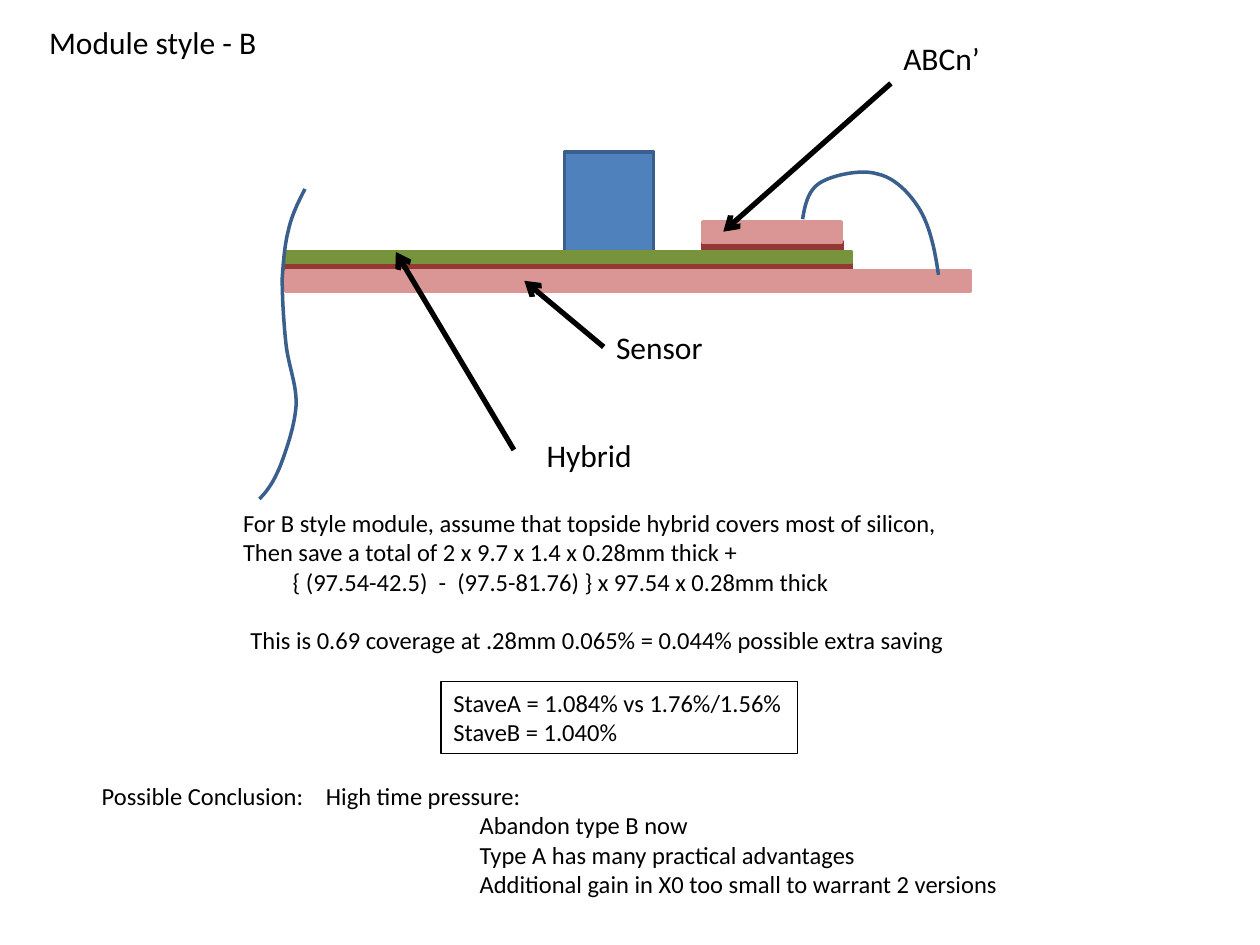
from dataclasses import dataclass

from lxml.etree import SubElement
from pptx import Presentation
from pptx.dml.color import RGBColor
from pptx.enum.shapes import MSO_CONNECTOR, MSO_SHAPE
from pptx.enum.text import MSO_AUTO_SIZE
from pptx.oxml.ns import qn
from pptx.slide import Slide
from pptx.util import Cm, Pt

BLACK, BLUE, BLUE_EDGE = "000000", "4F81BD", "3A5F8C"
GLUE, HYBRID, SILICON = "953735", "77933C", "D99694"
CURVE_STEPS = 12


def color(hex_string):
    return RGBColor.from_string(hex_string)


def bezier(start, segments):
    points = [start]
    for segment in segments:
        corners = (points[-1], *segment)
        for step in range(1, CURVE_STEPS + 1):
            t = step / CURVE_STEPS
            weights = ((1 - t) ** 3, 3 * t * (1 - t) ** 2, 3 * t * t * (1 - t), t ** 3)
            points.append(tuple(
                sum(weight * corner[axis] for weight, corner in zip(weights, corners))
                for axis in (0, 1)))
    return points


@dataclass
class Drawing:
    slide: Slide
    font_name: str = "Calibri"
    label_size: int = 18
    body_size: int = 14
    edge_width: float = 2
    arrow_width: float = 3

    def text(self, left, top, width, height, lines, size=None, border=None,
             indents=None, tab_stop=None):
        shape = self.slide.shapes.add_textbox(Cm(left), Cm(top), Cm(width), Cm(height))
        frame = shape.text_frame
        frame.word_wrap = False
        frame.auto_size = MSO_AUTO_SIZE.SHAPE_TO_FIT_TEXT
        frame.text = "\n".join(lines)
        for index, paragraph in enumerate(frame.paragraphs):
            properties = paragraph._p.get_or_add_pPr()
            if indents and indents[index]:
                properties.set("marL", str(Cm(indents[index])))
            if tab_stop and "\t" in lines[index]:
                tabs = SubElement(properties, qn("a:tabLst"))
                SubElement(tabs, qn("a:tab"), pos=str(Cm(tab_stop)), algn="l")
            paragraph.font.name = self.font_name
            paragraph.font.size = Pt(size or self.body_size)
            paragraph.font.color.rgb = color(BLACK)
        if border:
            shape.line.color.rgb = color(border)
            shape.line.width = Pt(0.75)
        return shape

    def label(self, left, top, width, wording):
        return self.text(left, top, width, 1.03, [wording], self.label_size)

    def layer(self, left, top, width, height, fill, edge=None):
        shape = self.slide.shapes.add_shape(
            MSO_SHAPE.RECTANGLE, Cm(left), Cm(top), Cm(width), Cm(height))
        shape.shadow.inherit = False
        shape.fill.solid()
        shape.fill.fore_color.rgb = color(fill)
        shape.line.color.rgb = color(edge or fill)
        shape.line.width = Pt(self.edge_width)

    def wire(self, start, segments):
        points = [(Cm(x), Cm(y)) for x, y in bezier(start, segments)]
        builder = self.slide.shapes.build_freeform(*points[0])
        builder.add_line_segments(points[1:], close=False)
        shape = builder.convert_to_shape()
        shape.shadow.inherit = False
        shape.fill.background()
        shape.line.color.rgb = color(BLUE_EDGE)
        shape.line.width = Pt(self.edge_width)

    def arrow(self, start, end, source=None):
        connector = self.slide.shapes.add_connector(
            MSO_CONNECTOR.STRAIGHT, *(Cm(value) for value in (*start, *end)))
        if source is not None:
            connector.begin_connect(source, 1)
        connector.line.color.rgb = color(BLACK)
        connector.line.width = Pt(self.arrow_width)
        SubElement(connector.line._get_or_add_ln(), qn("a:tailEnd"), type="arrow")
        SubElement(connector._element.spPr, qn("a:effectLst"))


def main():
    presentation = Presentation()
    presentation.slide_width, presentation.slide_height = Cm(25.4), Cm(19.05)
    drawing = Drawing(presentation.slides.add_slide(presentation.slide_layouts[6]))

    drawing.text(4.65, 10.11, 14.61, 2.06, [
        "For B style module, assume that topside hybrid covers most of silicon,",
        "Then save a total of 2 x 9.7 x 1.4 x 0.28mm thick +",
        "{ (97.54-42.5)  -  (97.5-81.76) } x 97.54 x 0.28mm thick",
    ], indents=(0, 0, 1))
    drawing.text(4.8, 12.47, 14.61, 0.86, [
        "This is 0.69 coverage at .28mm 0.065% = 0.044% possible extra saving"])
    drawing.text(8.89, 13.74, 7.19, 1.45, [
        "StaveA = 1.084% vs 1.76%/1.56%", "StaveB = 1.040%"], border=BLACK)
    drawing.text(1.8, 15.62, 18.75, 2.64, [
        "Possible Conclusion:\tHigh time pressure:",
        "Abandon type B now",
        "Type A has many practical advantages",
        "Additional gain in X0 too small to warrant 2 versions",
    ], indents=(0, 7.62, 7.62, 7.62), tab_stop=4.52)
    drawing.label(0.74, 0.33, 4.75, "Module style - B")

    drawing.layer(11.38, 3.07, 1.8, 2.01, BLUE, BLUE_EDGE)
    drawing.layer(14.17, 4.88, 2.82, 0.2, GLUE)
    drawing.layer(5.77, 5.26, 11.4, 0.2, GLUE)
    drawing.layer(5.77, 5.08, 11.4, 0.2, HYBRID)
    drawing.layer(5.77, 5.46, 13.79, 0.41, SILICON)
    drawing.layer(14.17, 4.47, 2.79, 0.41, SILICON)

    drawing.wire((16.18, 4.42), [
        ((16.23, 4.14), (16.28, 3.84), (16.54, 3.68)),
        ((16.79, 3.53), (17.37, 3.4), (17.7, 3.51)),
        ((18.03, 3.58), (18.34, 3.89), (18.54, 4.22)),
        ((18.75, 4.57), (18.85, 5.05), (18.92, 5.54))])
    drawing.arrow((10.36, 9.07), (7.98, 5.08))
    sensor = drawing.label(12.17, 6.48, 2.29, "Sensor")
    drawing.arrow((12.17, 6.99), (10.57, 5.66), sensor)
    drawing.label(17.96, 0.66, 2.06, "ABCn’")
    drawing.arrow((17.96, 1.68), (14.58, 4.67))
    drawing.wire((6.15, 3.81), [
        ((6.02, 4.06), (5.89, 4.32), (5.82, 4.62)),
        ((5.74, 4.93), (5.72, 5.21), (5.69, 5.61)),
        ((5.69, 5.99), (5.72, 6.53), (5.77, 6.96)),
        ((5.82, 7.39), (5.99, 7.77), (5.97, 8.18)),
        ((5.94, 8.59), (5.77, 9.09), (5.64, 9.42)),
        ((5.51, 9.73), (5.38, 9.91), (5.23, 10.06))])
    drawing.label(10.77, 8.66, 2.26, "Hybrid")

    presentation.save("out.pptx")


if __name__ == "__main__":
    main()
